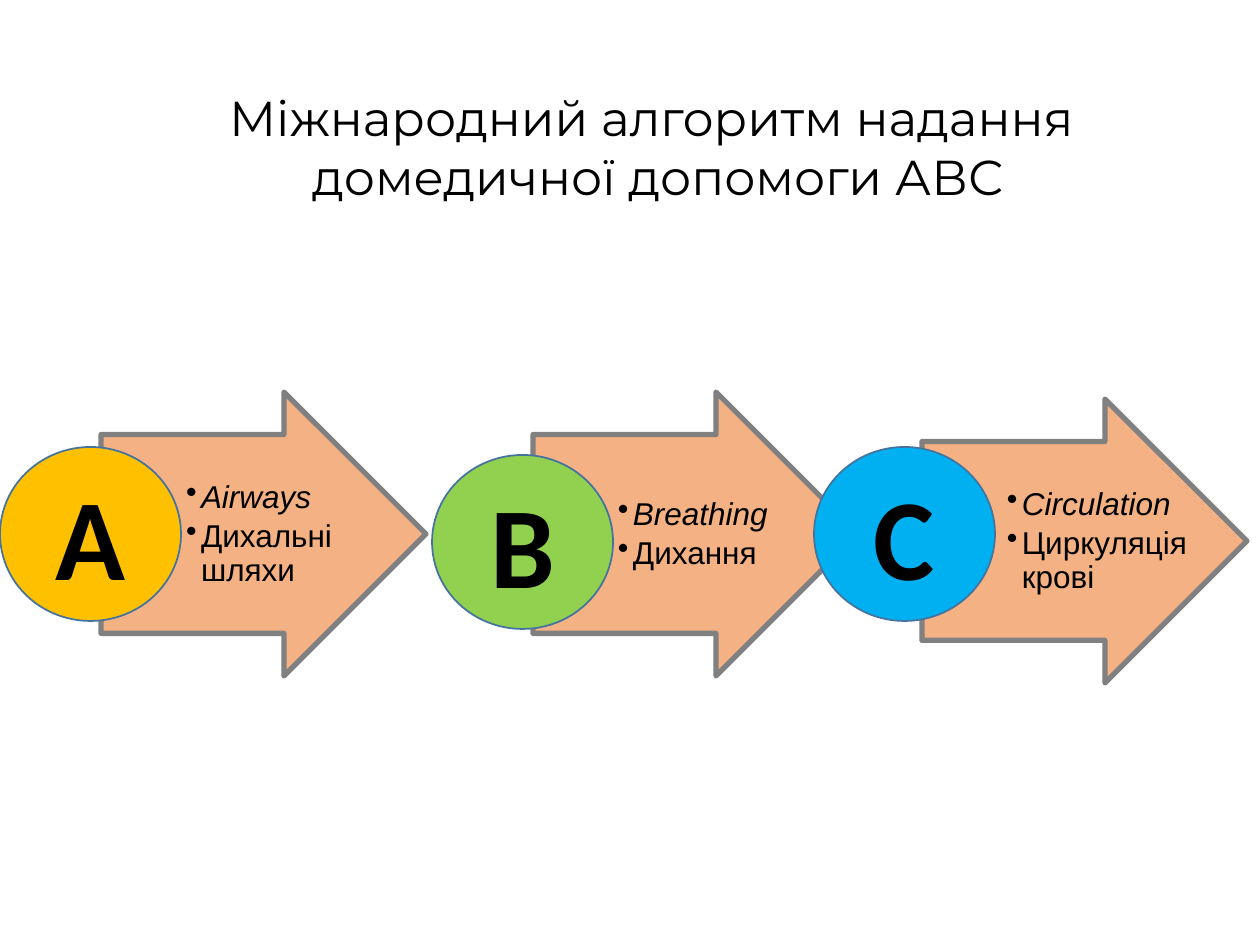
from dataclasses import dataclass

from lxml.etree import SubElement
from pptx import Presentation
from pptx.dml.color import RGBColor
from pptx.enum.shapes import MSO_SHAPE
from pptx.enum.text import MSO_ANCHOR, MSO_AUTO_SIZE, PP_ALIGN
from pptx.oxml.ns import qn
from pptx.util import Emu, Pt

# Content
TITLE = ["Міжнародний алгоритм надання ", "домедичної допомоги АВС"]
# letter, term, meaning, circle colour, circle (left, top), arrow (left, top), label width
STEPS = [
    ("А", "Аirways", "Дихальні шляхи", "FFC000", (0, 447), (101, 392), 159),
    ("В", "Вreathing", "Дихання", "92D050", (432, 455), (533, 392), 159),
    ("С", "Сirculation", "Циркуляція крові", "00B0F0", (814, 447), (922, 399), 188),
]


@dataclass(frozen=True)
class Theme:
    text: str = "000000"
    arrow: str = "F4B183"
    arrow_line: str = "808080"
    circle_line: str = "43739E"
    title_font: str = "Montserrat"
    label_font: str = "Arial"
    letter_font: str = "Calibri"
    title_size: int = 28
    label_size: int = 18
    letter_size: int = 66


THEME = Theme()

# Geometry in px, 126 to the inch
PAGE = (1260, 945)
TITLE_BOX = (181, 81, 953, 131)
ARROW = (325, 284)
CIRCLE = (181, 174)
LABEL_OFFSET = (81, 43)
LABEL_HEIGHT = 199
LABEL_INSETS = (4, 1, 2, 1)
BULLET_INDENT = 15


def px(value):
    return Emu(value * 914400 // 126)


def color(code):
    return RGBColor.from_string(code)


def set_font(font, name, size, bold=False, italic=False):
    font.name, font.size = name, Pt(size)
    font.bold, font.italic = bold, italic
    font.color.rgb = color(THEME.text)


def add_outlined(page, kind, place, size, fill, line, width):
    shape = page.shapes.add_shape(kind, *map(px, (*place, *size)))
    shape.shadow.inherit = False
    shape.fill.solid()
    shape.fill.fore_color.rgb = color(fill)
    shape.line.color.rgb = color(line)
    shape.line.width = Pt(width)
    return shape


def add_bullet(para):
    properties = para._p.get_or_add_pPr()
    properties.set("marL", str(px(BULLET_INDENT)))
    properties.set("indent", str(-px(BULLET_INDENT)))
    SubElement(properties, qn("a:buChar")).set("char", "•")


def add_label(page, place, width, lines):
    box = page.shapes.add_textbox(*map(px, (*place, width, LABEL_HEIGHT)))
    frame = box.text_frame
    frame.word_wrap = True
    frame.vertical_anchor = MSO_ANCHOR.MIDDLE
    (frame.margin_left, frame.margin_top,
     frame.margin_right, frame.margin_bottom) = map(px, LABEL_INSETS)
    frame.text = "\n".join(lines)
    for index, para in enumerate(frame.paragraphs):
        add_bullet(para)
        para.line_spacing = 0.9
        para.space_after = Pt(THEME.label_size * 0.15)
        set_font(para.runs[0].font, THEME.label_font, THEME.label_size, italic=index == 0)


def add_title(page):
    title = page.shapes.title
    title.left, title.top, title.width, title.height = map(px, TITLE_BOX)
    frame = title.text_frame
    frame.text = "\n".join(TITLE)
    frame.auto_size = MSO_AUTO_SIZE.NONE
    frame.vertical_anchor = MSO_ANCHOR.TOP
    for para in frame.paragraphs:
        para.alignment = PP_ALIGN.CENTER
        set_font(para.runs[0].font, THEME.title_font, THEME.title_size)


def add_arrow(page, place):
    arrow = add_outlined(page, MSO_SHAPE.RIGHT_ARROW, place, ARROW,
                         THEME.arrow, THEME.arrow_line, 3)
    arrow.adjustments[0], arrow.adjustments[1] = 0.7, 0.5


def add_letter(page, place, letter, fill):
    circle = add_outlined(page, MSO_SHAPE.OVAL, place, CIRCLE, fill, THEME.circle_line, 1)
    frame = circle.text_frame
    frame.text = letter
    frame.vertical_anchor = MSO_ANCHOR.MIDDLE
    para = frame.paragraphs[0]
    para.alignment = PP_ALIGN.CENTER
    set_font(para.runs[0].font, THEME.letter_font, THEME.letter_size, bold=True)


def main():
    deck = Presentation()
    deck.slide_width, deck.slide_height = map(px, PAGE)
    page = deck.slides.add_slide(deck.slide_layouts[5])
    add_title(page)

    # Arrows with their labels
    for _, term, meaning, _, _, (left, top), width in STEPS:
        add_arrow(page, (left, top))
        label_place = (left + LABEL_OFFSET[0], top + LABEL_OFFSET[1])
        add_label(page, label_place, width, [term, meaning])

    # Lettered circles lie over the arrows
    for letter, _, _, fill, place, _, _ in STEPS:
        add_letter(page, place, letter, fill)

    deck.save("out.pptx")


if __name__ == "__main__":
    main()
